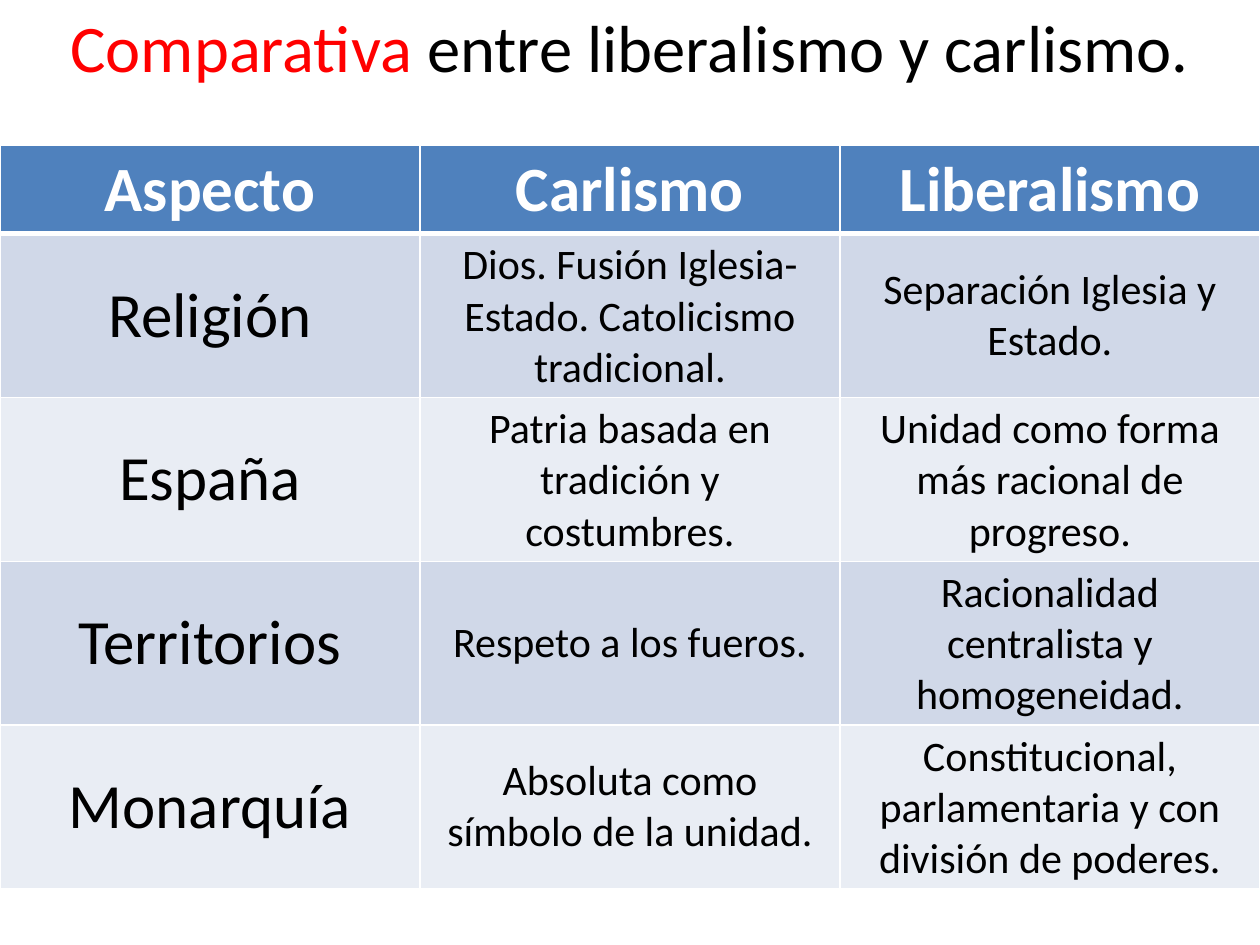
from lxml import etree
from pptx import Presentation
from pptx.dml.color import RGBColor
from pptx.enum.text import MSO_ANCHOR, MSO_AUTO_SIZE, PP_ALIGN
from pptx.oxml.ns import qn
from pptx.util import Cm, Pt

CENTER = PP_ALIGN.CENTER
MIDDLE = MSO_ANCHOR.MIDDLE
FIT_SHAPE = MSO_AUTO_SIZE.SHAPE_TO_FIT_TEXT

BLACK = RGBColor(0x00, 0x00, 0x00)
WHITE = RGBColor(0xFF, 0xFF, 0xFF)
RED = RGBColor(0xFF, 0x00, 0x00)
BLUE = RGBColor(0x4F, 0x81, 0xBD)
BANDS = (RGBColor(0xD0, 0xD8, 0xE8), RGBColor(0xE9, 0xED, 0xF4))

WIDTH = 25.4
HEIGHT = 19.05
HEADER_HEIGHT = 1.75
ROW_HEIGHT = 3.3

TITLE = (("Comparativa", RED), (" entre liberalismo y carlismo.", BLACK))
COMPARISON = (
    ("Aspecto", "Carlismo", "Liberalismo"),
    ("Religión", "Dios. Fusión Iglesia-Estado. Catolicismo tradicional.",
     "Separación Iglesia y Estado."),
    ("España", "Patria basada en tradición y costumbres.",
     "Unidad como forma más racional de progreso."),
    ("Territorios", "Respeto a los fueros.",
     "Racionalidad centralista y homogeneidad."),
    ("Monarquía", "Absoluta como símbolo de la unidad.",
     "Constitucional, parlamentaria y con división de poderes."),
)


class SlideBuilder:
    font_name = "Calibri"
    title_size = 38
    heading_size = 36
    body_size = 24

    def __init__(self, slide):
        self.slide = slide

    def style(self, paragraph, size, bold=False):
        paragraph.alignment = CENTER
        paragraph.font.name = self.font_name
        paragraph.font.size = Pt(size)
        paragraph.font.bold = bold

    def title(self, parts, left, top, width, height):
        shape = self.slide.shapes.add_textbox(Cm(left), Cm(top), Cm(width), Cm(height))
        frame = shape.text_frame
        frame.word_wrap = True
        frame.auto_size = FIT_SHAPE
        paragraph = frame.paragraphs[0]
        self.style(paragraph, self.title_size)
        for text, color in parts:
            run = paragraph.add_run()
            run.text = text
            run.font.color.rgb = color

    def border(self, cell, side, points):
        properties = cell._tc.get_or_add_tcPr()
        line = etree.SubElement(properties, qn(f"a:ln{side}"), w=str(Pt(points)))
        fill = etree.SubElement(line, qn("a:solidFill"))
        etree.SubElement(fill, qn("a:srgbClr"), val=str(WHITE))

    def cell(self, cell, text, row, column):
        header = row == 0
        borders = {"L": 1, "R": 1, "T": 3 if row == 1 else 1, "B": 3 if header else 1}
        for side, points in borders.items():
            self.border(cell, side, points)
        cell.fill.solid()
        cell.fill.fore_color.rgb = BLUE if header else BANDS[(row - 1) % 2]
        cell.vertical_anchor = MIDDLE
        cell.text = text
        paragraph = cell.text_frame.paragraphs[0]
        heading = header or column == 0
        self.style(paragraph, self.heading_size if heading else self.body_size, header)
        paragraph.font.color.rgb = WHITE if header else BLACK

    def table(self, rows, left, top, width):
        heights = [HEADER_HEIGHT] + [ROW_HEIGHT] * (len(rows) - 1)
        table = self.slide.shapes.add_table(
            len(rows), len(rows[0]), Cm(left), Cm(top), Cm(width), Cm(sum(heights))
        ).table
        for row, texts in enumerate(rows):
            table.rows[row].height = Cm(heights[row])
            for column, text in enumerate(texts):
                self.cell(table.cell(row, column), text, row, column)


def main():
    presentation = Presentation()
    presentation.slide_width = Cm(WIDTH)
    presentation.slide_height = Cm(HEIGHT)
    builder = SlideBuilder(presentation.slides.add_slide(presentation.slide_layouts[6]))
    builder.title(TITLE, 0, 0, WIDTH, 1.88)
    builder.table(COMPARISON, 0, 2.93, WIDTH)
    presentation.save("out.pptx")


if __name__ == "__main__":
    main()
